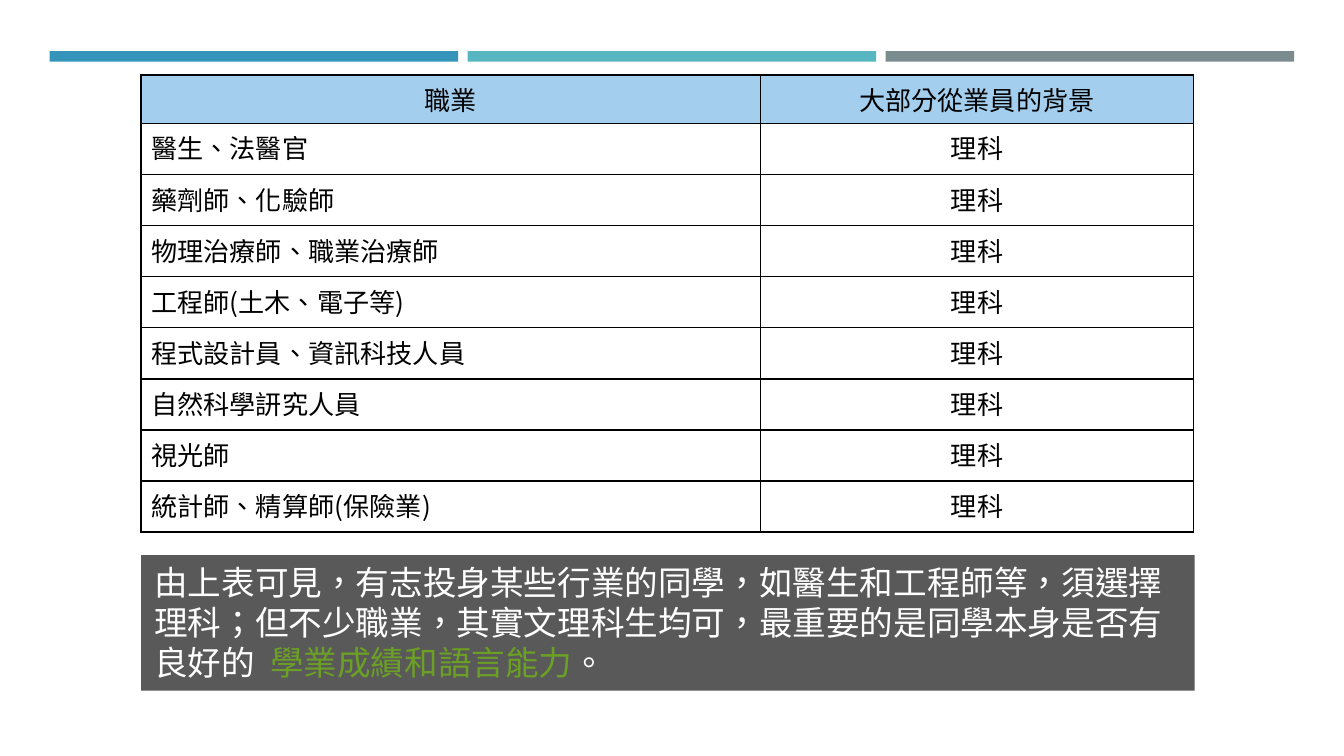
from lxml import etree
from pptx import Presentation
from pptx.dml.color import RGBColor
from pptx.enum import shapes, text
from pptx.oxml import ns
from pptx.util import Inches, Pt

FONT = "Noto Sans CJK SC"
LANGUAGE = "zh-TW"
BLACK = RGBColor(0x00, 0x00, 0x00)
WHITE = RGBColor(0xFF, 0xFF, 0xFF)
HEADER_BLUE = RGBColor(0xA3, 0xCE, 0xED)
DARK_GREY = RGBColor(0x59, 0x59, 0x59)
GREEN = RGBColor(0x6B, 0x9F, 0x25)
BAR_COLORS = [
    RGBColor(0x34, 0x94, 0xBA),
    RGBColor(0x58, 0xB6, 0xC0),
    RGBColor(0x7A, 0x8C, 0x8E),
]

HEADERS = ("職業", "大部分從業員的背景")
BACKGROUND = "理科"
JOBS = [
    "醫生、法醫官",
    "藥劑師、化驗師",
    "物理治療師、職業治療師",
    "工程師(土木、電子等)",
    "程式設計員、資訊科技人員",
    "自然科學訮究人員",
    "視光師",
    "統計師、精算師(保險業)",
]
CONCLUSION = [
    ("由上表可見，有志投身某些行業的同學，如醫生和工程師等，須選擇理科；"
     "但不少職業，其實文理科生均可，最重要的是同學本身是否有良好的  ", WHITE),
    ("學業成績和語言能力", GREEN),
    ("。", WHITE),
]

LEFT, WIDTH = 1.05, 7.84
COLUMN_WIDTHS = (4.61, 3.22)
HEADER_HEIGHT, ROW_HEIGHT = 0.34, 0.38
BAR_LEFT, BAR_WIDTH, BAR_GAP = 0.37, 3.04, 0.07


def set_font(para, size, color):
    """Set font and language for Latin and East Asian text alike."""
    para.font.size = Pt(size)
    para.font.color.rgb = color
    para.font.name = FONT
    latin = para._p.find(".//" + ns.qn("a:latin"))
    latin.addnext(etree.Element(ns.qn("a:ea"), typeface=FONT))
    latin.getparent().set("lang", LANGUAGE)


def add_borders(cell):
    properties = cell._tc.get_or_add_tcPr()
    for index, side in enumerate(("lnL", "lnR", "lnT", "lnB")):
        line = etree.Element(ns.qn("a:" + side), w=str(Pt(1)))
        fill = etree.SubElement(line, ns.qn("a:solidFill"))
        etree.SubElement(fill, ns.qn("a:srgbClr"), val=str(BLACK))
        properties.insert(index, line)


def add_rectangle(page, left, top, width, height, color):
    box = page.shapes.add_shape(
        shapes.MSO_SHAPE.RECTANGLE,
        Inches(left), Inches(top), Inches(width), Inches(height))
    box.shadow.inherit = False
    box.fill.solid()
    box.fill.fore_color.rgb = color
    box.line.fill.background()
    return box


def add_job_table(page):
    rows = [HEADERS] + [(job, BACKGROUND) for job in JOBS]
    height = HEADER_HEIGHT + ROW_HEIGHT * len(JOBS)
    table = page.shapes.add_table(
        len(rows), len(HEADERS),
        Inches(LEFT), Inches(0.56), Inches(WIDTH), Inches(height)).table
    for column, width in zip(table.columns, COLUMN_WIDTHS):
        column.width = Inches(width)
    for r, row in enumerate(rows):
        table.rows[r].height = Inches(ROW_HEIGHT if r else HEADER_HEIGHT)
        for c, wording in enumerate(row):
            cell = table.cell(r, c)
            cell.text = wording
            cell.margin_left = cell.margin_right = Pt(5.4)
            cell.margin_top = cell.margin_bottom = Pt(2.7)
            cell.fill.solid()
            cell.fill.fore_color.rgb = WHITE if r else HEADER_BLUE
            add_borders(cell)
            para = cell.text_frame.paragraphs[0]
            centred = r == 0 or c == 1
            para.alignment = text.PP_ALIGN.CENTER if centred else text.PP_ALIGN.LEFT
            set_font(para, 14, BLACK)


def add_conclusion(page):
    box = add_rectangle(page, LEFT, 4.13, WIDTH, 1.01, DARK_GREY)
    frame = box.text_frame
    frame.word_wrap = True
    frame.auto_size = text.MSO_AUTO_SIZE.SHAPE_TO_FIT_TEXT
    frame.vertical_anchor = text.MSO_ANCHOR.TOP
    para = frame.paragraphs[0]
    para.alignment = text.PP_ALIGN.LEFT
    set_font(para, 18, WHITE)
    for wording, color in CONCLUSION:
        span = para.add_run()
        span.text = wording
        span.font.color.rgb = color


def main():
    deck = Presentation()
    deck.slide_width = Inches(10)
    deck.slide_height = Inches(10 * 9 / 16)
    page = deck.slides.add_slide(deck.slide_layouts[6])
    for index, color in enumerate(BAR_COLORS):
        left = BAR_LEFT + index * (BAR_WIDTH + BAR_GAP)
        add_rectangle(page, left, 0.38, BAR_WIDTH, 0.08, color)
    add_job_table(page)
    add_conclusion(page)
    deck.save("out.pptx")


if __name__ == "__main__":
    main()
